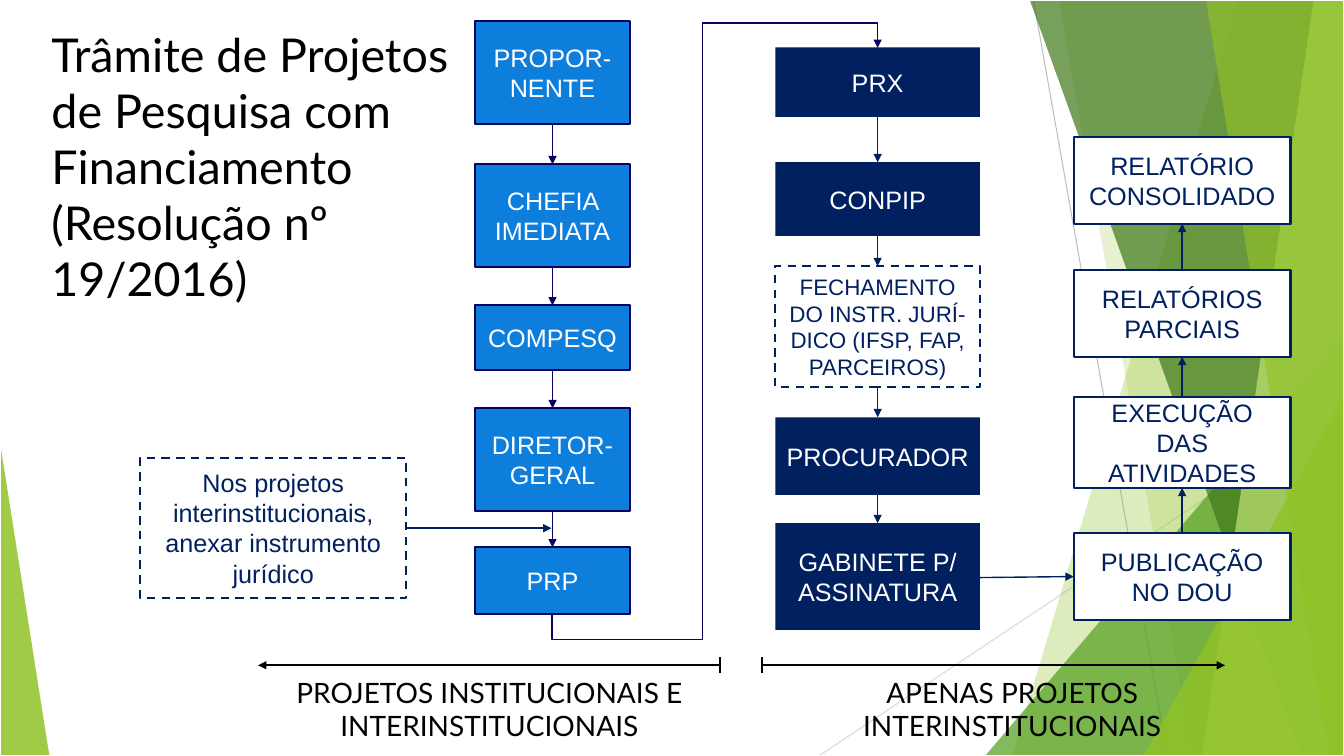
from dataclasses import dataclass
from itertools import pairwise

from lxml.etree import SubElement
from pptx import Presentation
from pptx.dml.color import RGBColor
from pptx.enum.dml import MSO_LINE_DASH_STYLE as Dash
from pptx.enum.shapes import MSO_CONNECTOR_TYPE as Link, MSO_SHAPE as Preset
from pptx.enum.text import MSO_ANCHOR as Anchor, MSO_AUTO_SIZE as Fit, PP_ALIGN as Align
from pptx.oxml.ns import qn
from pptx.util import Inches, Pt

NAVY, INK, BLUE, WHITE, BLACK = "002060", "09025E", "0D7EDB", "FFFFFF", "000000"
WIDTH, HEIGHT = 13.33, 7.5


@dataclass(frozen=True)
class Style:
    fill: str
    text: str
    line: str | None = None
    dashed: bool = False
    size: float = 18


@dataclass(frozen=True)
class Step:
    text: str
    top: float
    height: float
    style: Style


@dataclass(frozen=True)
class Column:
    left: float
    width: float
    arrow_color: str
    steps: tuple[Step, ...]

    @property
    def center(self) -> float:
        return self.left + self.width / 2


@dataclass(frozen=True)
class Facet:
    color: str
    alpha: int
    top_left: float
    bottom_left: float
    bottom_right: float = WIDTH


@dataclass(frozen=True)
class Corner:
    color: str
    alpha: int
    left: float
    top: float
    width: float
    apex: int


SOLID_BLUE = Style(BLUE, WHITE, INK)
SOLID_NAVY = Style(NAVY, WHITE)
OUTLINED = Style(WHITE, NAVY, NAVY)
DASHED = Style(WHITE, NAVY, NAVY, True)
DASHED_SMALL = Style(WHITE, NAVY, NAVY, True, 16)

COLUMNS = (
    Column(4.71, 1.54, INK, (
        Step("PROPOR-NENTE", 0.21, 1.02, SOLID_BLUE),
        Step("CHEFIA IMEDIATA", 1.63, 1.02, SOLID_BLUE),
        Step("COMPESQ", 3.03, 0.64, SOLID_BLUE),
        Step("DIRETOR-GERAL", 4.05, 1.02, SOLID_BLUE),
        Step("PRP", 5.43, 0.66, SOLID_BLUE),
    )),
    Column(7.69, 2.03, NAVY, (
        Step("PRX", 0.47, 0.69, SOLID_NAVY),
        Step("CONPIP", 1.61, 0.73, SOLID_NAVY),
        Step("FECHAMENTO DO INSTR. JURÍ-\nDICO (IFSP, FAP, PARCEIROS)", 2.64, 1.2, DASHED_SMALL),
        Step("PROCURADOR", 4.14, 0.77, SOLID_NAVY),
        Step("GABINETE P/ ASSINATURA", 5.19, 1.06, SOLID_NAVY),
    )),
    Column(10.65, 2.15, NAVY, (
        Step("PUBLICAÇÃO NO DOU", 5.29, 0.86, OUTLINED),
        Step("EXECUÇÃO DAS ATIVIDADES", 3.94, 0.9, OUTLINED),
        Step("RELATÓRIOS\nPARCIAIS", 2.68, 0.86, OUTLINED),
        Step("RELATÓRIO CONSOLIDADO", 1.36, 0.86, OUTLINED),
    )),
)
NOTE = Step("Nos projetos interinstitucionais, anexar instrumento jurídico", 4.54, 1.39, DASHED)
DECOR = (
    Facet("90C226", 30, 12.28, 10.04),
    Facet("90C226", 20, 10.5, 11.83),
    Corner("54A021", 72, 9.77, 3.33, 3.56, 1),
    Facet("3F7819", 70, 10.21, 12.91),
    Facet("C0E474", 70, 13.03, 11.92),
    Facet("90C226", 65, 11.96, 13.18),
    Corner("90C226", 80, 11.34, 3.93, 1.99, 1),
    Corner("90C226", 85, 0, 4.39, 0.49, 0),
)


def rgb(color: str) -> RGBColor:
    return RGBColor.from_string(color)


def apply(target, values: dict) -> None:
    for name, value in values.items():
        setattr(target, name, value)


def paint(shape, color: str, alpha: int = 100) -> None:
    shape.shadow.inherit = False
    shape.fill.solid()
    shape.fill.fore_color.rgb = rgb(color)
    if alpha < 100:
        tint = shape.fill._xPr.find(f".//{qn('a:srgbClr')}")
        SubElement(tint, qn("a:alpha"), val=str(alpha * 1000))


def write(shape, text: str, font: str, size: float, color: str,
          align: Align, anchor: Anchor, fit: Fit = Fit.NONE) -> None:
    frame = shape.text_frame
    frame.text = text
    apply(frame, {"word_wrap": True, "vertical_anchor": anchor, "auto_size": fit})
    for para in frame.paragraphs:
        para.alignment = align
        for span in para.runs:
            apply(span.font, {"name": font, "size": Pt(size)})
            span.font.color.rgb = rgb(color)


def draw_line(page, start: tuple[float, float], end: tuple[float, float], color: str,
              width: float = 1, arrow: bool = True, kind: Link = Link.STRAIGHT):
    line = page.shapes.add_connector(kind, *map(Inches, start + end))
    line.line.color.rgb = rgb(color)
    line.line.width = Pt(width)
    if arrow:
        SubElement(line.line._get_or_add_ln(), qn("a:tailEnd"), type="triangle")
    SubElement(line._element.spPr, qn("a:effectLst"))
    return line


def draw_box(page, left: float, width: float, step: Step) -> None:
    style = step.style
    box = page.shapes.add_shape(Preset.RECTANGLE, *map(Inches, (left, step.top, width, step.height)))
    paint(box, style.fill)
    if style.line:
        box.line.color.rgb = rgb(style.line)
        box.line.width = Pt(1.5)
    else:
        box.line.fill.background()
    if style.dashed:
        box.line.dash_style = Dash.DASH
    write(box, step.text, "Arial", style.size, style.text, Align.CENTER, Anchor.MIDDLE)


def draw_decor(page, item: Facet | Corner) -> None:
    if isinstance(item, Facet):
        builder = page.shapes.build_freeform(Inches(item.top_left), Inches(-0.01))
        outline = ((WIDTH, -0.01), (WIDTH, HEIGHT), (item.bottom_left, HEIGHT))
        builder.add_line_segments([(Inches(x), Inches(y)) for x, y in outline], close=True)
        shape = builder.convert_to_shape()
    else:
        shape = page.shapes.add_shape(Preset.ISOSCELES_TRIANGLE, *map(
            Inches, (item.left, item.top, item.width, HEIGHT - item.top)))
        shape.adjustments[0] = item.apex
    paint(shape, item.color, item.alpha)
    shape.line.fill.background()


def draw_column(page, column: Column) -> None:
    for step in column.steps:
        draw_box(page, column.left, column.width, step)
    for step, following in pairwise(column.steps):
        if following.top > step.top:
            ends = step.top + step.height, following.top
        else:
            ends = step.top, following.top + following.height
        draw_line(page, (column.center, ends[0]), (column.center, ends[1]), column.arrow_color)


def draw_return_path(page) -> None:
    elbow = draw_line(page, (9.9, 4.9), (4.28, 1.67), INK, kind=Link.ELBOW)
    elbow._element.spPr.find(qn("a:xfrm")).set("rot", "5400000")
    geometry = elbow._element.spPr.find(qn("a:prstGeom"))
    geometry.set("prst", "bentConnector5")
    guides = geometry.find(qn("a:avLst"))
    for number, value in enumerate((-4400, 46200, 104400), 1):
        SubElement(guides, qn("a:gd"), name=f"adj{number}", fmla=f"val {value}")


def draw_range(page, start: float, end: float, left: float, width: float, text: str) -> None:
    draw_line(page, (start, 6.6), (end, 6.6), BLACK, 1.25)
    draw_line(page, (start, 6.52), (start, 6.68), BLACK, 1.5, False)
    caption = page.shapes.add_textbox(*map(Inches, (left, 6.65, width, 0.77)))
    write(caption, text, "Lato", 20, BLACK, Align.CENTER, Anchor.TOP, Fit.SHAPE_TO_FIT_TEXT)


def main() -> None:
    deck = Presentation()
    apply(deck, {"slide_width": Inches(WIDTH), "slide_height": Inches(HEIGHT)})
    page = deck.slides.add_slide(deck.slide_layouts[5])
    draw_line(page, (10.25, 0), (11.58, HEIGHT), "BFBFBF", 0.75, False)
    draw_line(page, (WIDTH, 4.03), (8.12, HEIGHT), "D9D9D9", 0.75, False)
    for item in DECOR:
        draw_decor(page, item)
    border = page.shapes.add_shape(Preset.RECTANGLE, 0, 0, deck.slide_width, deck.slide_height)
    border.shadow.inherit = False
    border.fill.background()
    border.line.color.rgb = rgb(WHITE)
    border.line.width = Pt(1.5)
    title = page.shapes.title
    apply(title, {"left": Inches(0.41), "top": Inches(0.21),
                  "width": Inches(4.38), "height": Inches(3.29)})
    write(title, "Trâmite de Projetos\nde Pesquisa com\nFinanciamento\n(Resolução nº 19/2016)",
          "Lato", 33.3, BLACK, Align.LEFT, Anchor.TOP)
    for column in COLUMNS:
        draw_column(page, column)
    draw_return_path(page)
    draw_box(page, 1.39, 2.64, NOTE)
    draw_line(page, (4.03, 5.24), (5.47, 5.24), NAVY)
    draw_line(page, (9.72, 5.73), (10.65, 5.72), NAVY)
    draw_range(page, 7.14, 2.56, 2.09, 5.53, "PROJETOS INSTITUCIONAIS E\nINTERINSTITUCIONAIS")
    draw_range(page, 7.56, 12.15, 7.69, 4.7, "APENAS PROJETOS INTERINSTITUCIONAIS")
    deck.save("out.pptx")


if __name__ == "__main__":
    main()
